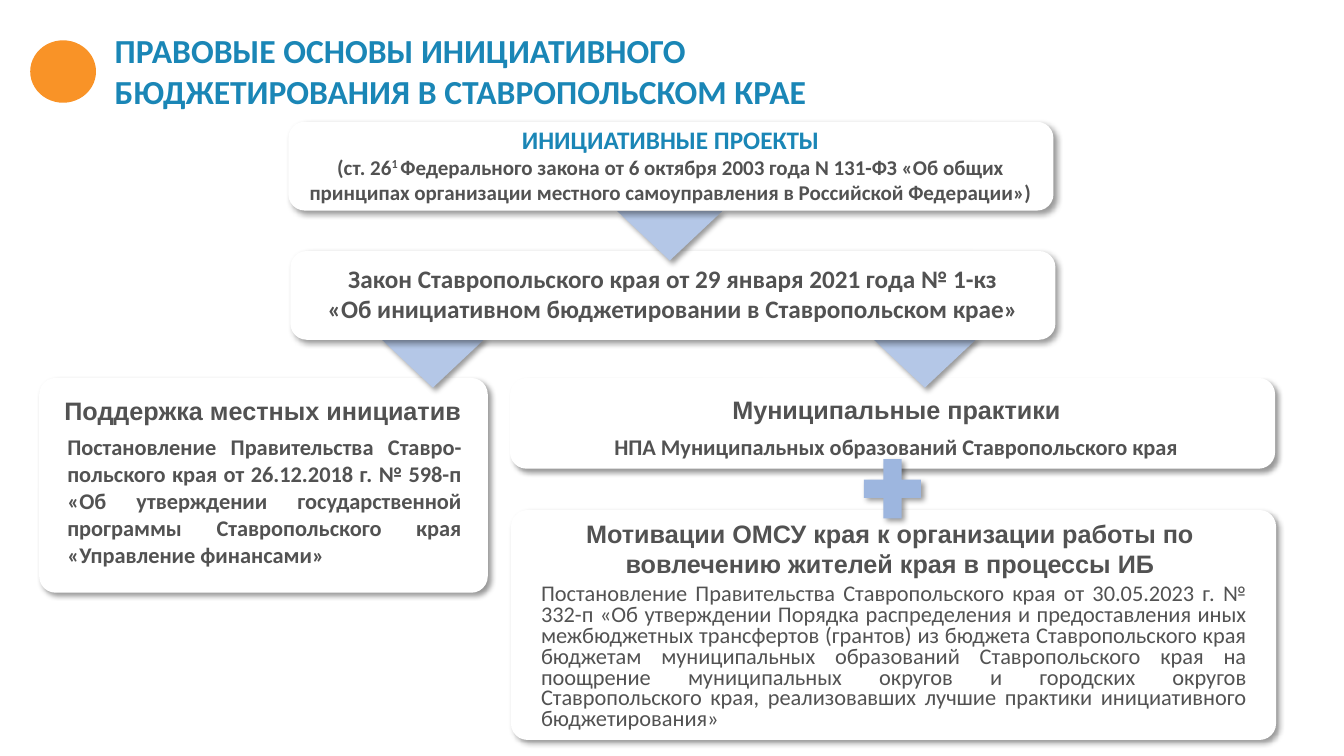
"""Build the slide on the legal basis of initiative budgeting."""
from lxml.etree import SubElement
from pptx import Presentation
from pptx.dml.color import RGBColor
from pptx.enum.shapes import MSO_SHAPE as SHAPE
from pptx.enum.text import PP_ALIGN as ALIGN
from pptx.oxml.ns import qn
from pptx.util import Pt

WHITE, GREY, BLUE = "FFFFFF", "525252", "1A86B6"
ARROW_FILL, PLUS_FILL, LOGO_FILL = "B4C7E7", "9DB6DF", "F99327"
WIDE, ARROW_W, ARROW_H, RADIUS = 546.5, 75, 35.3, 11.7

HEAD = dict(name="Arial", size=Pt(18), bold=True)
TITLE = dict(name="Calibri", size=Pt(24), bold=True)
LAW = dict(name="Calibri", size=Pt(18), bold=True)
BASIS = dict(name="Calibri", size=Pt(15), bold=True)
BODY = dict(name="Calibri", size=Pt(16), bold=True)
PLAIN = dict(name="Calibri", size=Pt(16), bold=False)

LOGO = (21.6, 28.8, 47, 44.6)
PLUS = (609.8, 320.4, 55.4, 57.6)
LOWER_CARDS = [
    (365, 364.3, WIDE, 164.2),
    (364.3, 270, WIDE, 64.8),
    (28, 270, 320.4, 153.4),
]
LAW_CARD = (207.4, 179.3, WIDE, 63.4)
PROJECTS_CARD = (206, 87, WIDE, 63.4)
LAW_ARROWS = [(309.2, 241.6), (660.6, 241.6)]
PROJECTS_ARROW = (478.4, 150.8)

LOWER_TEXTS = [
    ((41, 306, 295.9, 104.4), ALIGN.JUSTIFY, BODY, GREY,
     ["Постановление Правительства Ставро-польского края от 26.12.2018 г. № 598-п "
      "«Об утверждении государственной программы Ставропольского края "
      "«Управление финансами»"]),
    ((38.9, 278.6, 301, 28.8), ALIGN.JUSTIFY, HEAD, GREY, ["Поддержка местных инициатив"]),
    ((369.4, 306, 541.4, 26.6), ALIGN.CENTER, BODY, GREY,
     ["НПА Муниципальных образований Ставропольского края"]),
    ((365, 366.5, 541.4, 51.1), ALIGN.CENTER, HEAD, GREY,
     ["Мотивации ОМСУ края к организации работы по вовлечению жителей края в процессы ИБ"]),
    ((74.9, 18, 556.6, 65.5), ALIGN.LEFT, TITLE, BLUE,
     ["ПРАВОВЫЕ ОСНОВЫ ИНИЦИАТИВНОГО БЮДЖЕТИРОВАНИЯ В СТАВРОПОЛЬСКОМ КРАЕ"]),
    ((482.4, 278, 316, 28.8), ALIGN.CENTER, HEAD, GREY, ["Муниципальные практики"]),
]
GRANTS_AT = (379.4, 414, 518.4, 113)
GRANTS = ("Постановление Правительства Ставропольского края от 30.05.2023 г. № 332-п "
          "«Об утверждении Порядка распределения и предоставления иных межбюджетных "
          "трансфертов (грантов) из бюджета Ставропольского края бюджетам муниципальных "
          "образований Ставропольского края на поощрение муниципальных округов и городских "
          "округов Ставропольского края, реализовавших лучшие практики инициативного "
          "бюджетирования»")
LAW_AT = (208.1, 184.3, 545, 51.1)
LAW_LINES = ["Закон Ставропольского края от 29 января 2021 года № 1-кз",
             "«Об инициативном бюджетировании в Ставропольском крае»"]
PROJECTS_AT = (206.6, 85, 545, 65.5)
PROJECTS = "ИНИЦИАТИВНЫЕ ПРОЕКТЫ"
BASIS_PARTS = ["(ст. 26", "1 ",
               "Федерального закона от 6 октября 2003 года N 131-ФЗ «Об общих принципах "
               "организации местного самоуправления в Российской Федерации»)"]


def rgb(value):
    return RGBColor.from_string(value)


def add_shadow(sp):
    effects = sp._element.spPr.find(qn("a:effectLst"))
    shadow = SubElement(effects, qn("a:outerShdw"), blurRad=str(Pt(4)), dist=str(Pt(3)),
                        dir="2700000", algn="tl", rotWithShape="0")
    color = SubElement(shadow, qn("a:srgbClr"), val="000000")
    SubElement(color, qn("a:alpha"), val="40000")


def add_figure(s, kind, at, fill, adjustments=(), shadow=True):
    sp = s.shapes.add_shape(kind, *map(Pt, at))
    sp.shadow.inherit = False
    sp.fill.solid()
    sp.fill.fore_color.rgb = rgb(fill)
    sp.line.fill.background()
    for i, value in enumerate(adjustments):
        sp.adjustments[i] = value
    if shadow:
        add_shadow(sp)


def add_card(s, at):
    add_figure(s, SHAPE.ROUNDED_RECTANGLE, at, WHITE, [RADIUS / min(at[2:])])


def add_arrow(s, center, top):
    at = (center - ARROW_W / 2, top, ARROW_W, ARROW_H)
    add_figure(s, SHAPE.DOWN_ARROW, at, ARROW_FILL, [0.5, 1])


def add_run(p, text, style, color):
    r = p.add_run()
    r.text = text
    for name, value in style.items():
        setattr(r.font, name, value)
    r.font.color.rgb = rgb(color)
    return r


def add_text(s, at, align, style, color, lines):
    tf = s.shapes.add_textbox(*map(Pt, at)).text_frame
    tf.word_wrap = True
    for i, line in enumerate(lines):
        p = tf.add_paragraph() if i else tf.paragraphs[0]
        p.alignment = align
        add_run(p, line, style, color)
    return tf


def main():
    prs = Presentation()
    prs.slide_width, prs.slide_height = Pt(960), Pt(540)
    s = prs.slides.add_slide(prs.slide_layouts[6])

    add_figure(s, SHAPE.OVAL, LOGO, LOGO_FILL, shadow=False)
    for at in LOWER_CARDS:
        add_card(s, at)
    add_figure(s, SHAPE.MATH_PLUS, PLUS, PLUS_FILL)
    for item in LOWER_TEXTS:
        add_text(s, *item)
    tf = add_text(s, GRANTS_AT, ALIGN.JUSTIFY, PLAIN, GREY, [GRANTS])
    tf.paragraphs[0].line_spacing = Pt(15)

    for center, top in LAW_ARROWS:
        add_arrow(s, center, top)
    add_card(s, LAW_CARD)
    add_text(s, LAW_AT, ALIGN.CENTER, LAW, GREY, LAW_LINES)

    add_arrow(s, *PROJECTS_ARROW)
    add_card(s, PROJECTS_CARD)
    tf = add_text(s, PROJECTS_AT, ALIGN.CENTER, LAW, BLUE, [PROJECTS])
    p = tf.add_paragraph()
    p.alignment = ALIGN.CENTER
    runs = [add_run(p, part, BASIS, GREY) for part in BASIS_PARTS]
    runs[1].font._element.set("baseline", "30000")

    prs.save("out.pptx")


if __name__ == "__main__":
    main()
